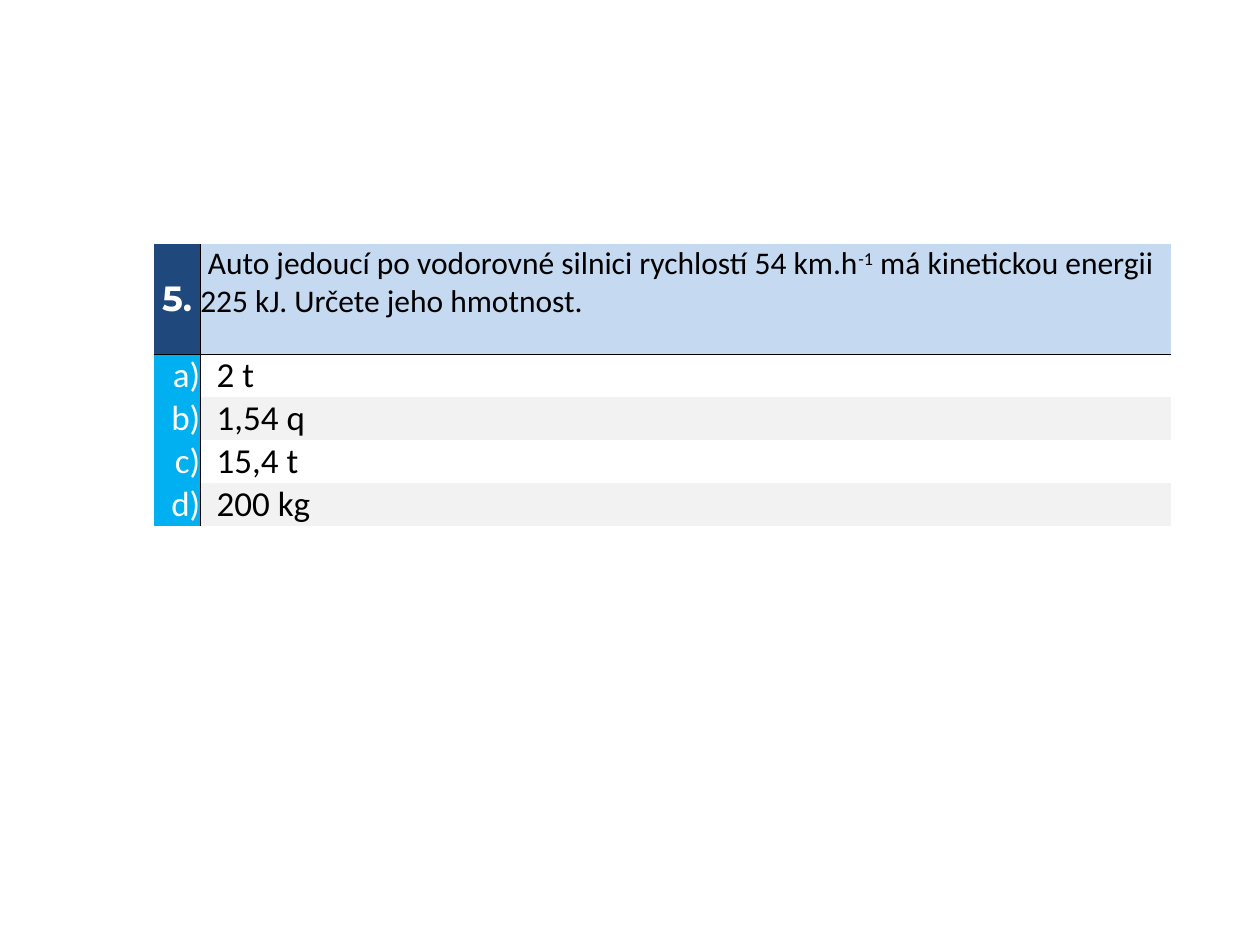
from lxml import etree
from pptx import Presentation
from pptx import util as u
from pptx.dml.color import RGBColor
from pptx.enum import text
from pptx.oxml.ns import qn

BLACK, WHITE = "000000", "FFFFFF"
NAVY, SKY, PALE, GREY = "1F497D", "00B0F0", "C5D9F1", "F2F2F2"


def color(code):
    return RGBColor.from_string(code)


class Quiz:
    def __init__(self, deck):
        self.font = "Calibri"
        self.slide = deck.slides.add_slide(deck.slide_layouts[6])

    def table(self, left, top, cols, rows):
        frame = self.slide.shapes.add_table(
            len(rows), len(cols), u.Inches(left), u.Inches(top),
            u.Inches(sum(cols)), u.Inches(sum(rows)))
        grid = frame.table
        grid.first_row = grid.horz_banding = False
        for col, width in zip(grid.columns, cols):
            col.width = u.Inches(width)
        for row, height in zip(grid.rows, rows):
            row.height = u.Inches(height)
        return grid

    def edges(self, cell, sides):
        props = cell._tc.get_or_add_tcPr()
        for side in "LRTB":
            line = etree.SubElement(props, qn("a:ln" + side), w=str(u.Pt(0.5)))
            if side in sides:
                fill = etree.SubElement(line, qn("a:solidFill"))
                etree.SubElement(fill, qn("a:srgbClr"), val=BLACK)
            else:
                etree.SubElement(line, qn("a:noFill"))

    def cell(self, cell, parts, fill, sides, ink=BLACK, size=20, font=None,
             bold=False, align="LEFT", anchor="MIDDLE", inset=0, indent=0):
        """Fill one cell; every second part of the text is raised."""
        self.edges(cell, sides)
        if fill:
            cell.fill.solid()
            cell.fill.fore_color.rgb = color(fill)
        else:
            cell.fill.background()
        cell.margin_left = u.Inches(inset)
        cell.margin_right = cell.margin_top = cell.margin_bottom = 0
        cell.vertical_anchor = text.MSO_ANCHOR[anchor]
        para = cell.text_frame.paragraphs[0]
        para.alignment = text.PP_ALIGN[align]
        if indent:
            para._p.get_or_add_pPr().set("indent", str(u.Inches(indent)))
        for i, part in enumerate(parts):
            run = para.add_run()
            run.text = part
            if i % 2:
                run._r.get_or_add_rPr().set("baseline", "30000")
        style = para.font
        style.name = font or self.font
        style.size = u.Pt(size)
        style.bold = bold
        style.color.rgb = color(ink)


def main():
    deck = Presentation()
    deck.slide_width, deck.slide_height = u.Inches(10), u.Inches(7.5)
    quiz = Quiz(deck)
    answers = ["2 t", "1,54 q", "15,4 t", "200 kg"]
    grid = quiz.table(1.22, 1.94, [0.37, 7.7], [0.87] + [0.34] * len(answers))

    # Question
    quiz.cell(grid.cell(0, 0), ["5."], NAVY, "RB", WHITE,
              font="Montserrat", bold=True, align="CENTER")
    quiz.cell(grid.cell(0, 1),
              ["Auto jedoucí po vodorovné silnici rychlostí 54 km.h", "-1",
               " má kinetickou energii 225 kJ. Určete jeho hmotnost."],
              PALE, "LB", size=18, anchor="TOP", indent=0.06)

    # Answers
    for i, answer in enumerate(answers, 1):
        top = "T" if i == 1 else ""
        quiz.cell(grid.cell(i, 0), ["abcd"[i - 1] + ")"], SKY, "R" + top,
                  WHITE, align="RIGHT")
        quiz.cell(grid.cell(i, 1), [answer], None if i % 2 else GREY,
                  "L" + top, anchor="BOTTOM", inset=0.13)

    deck.save("out.pptx")


if __name__ == "__main__":
    main()
